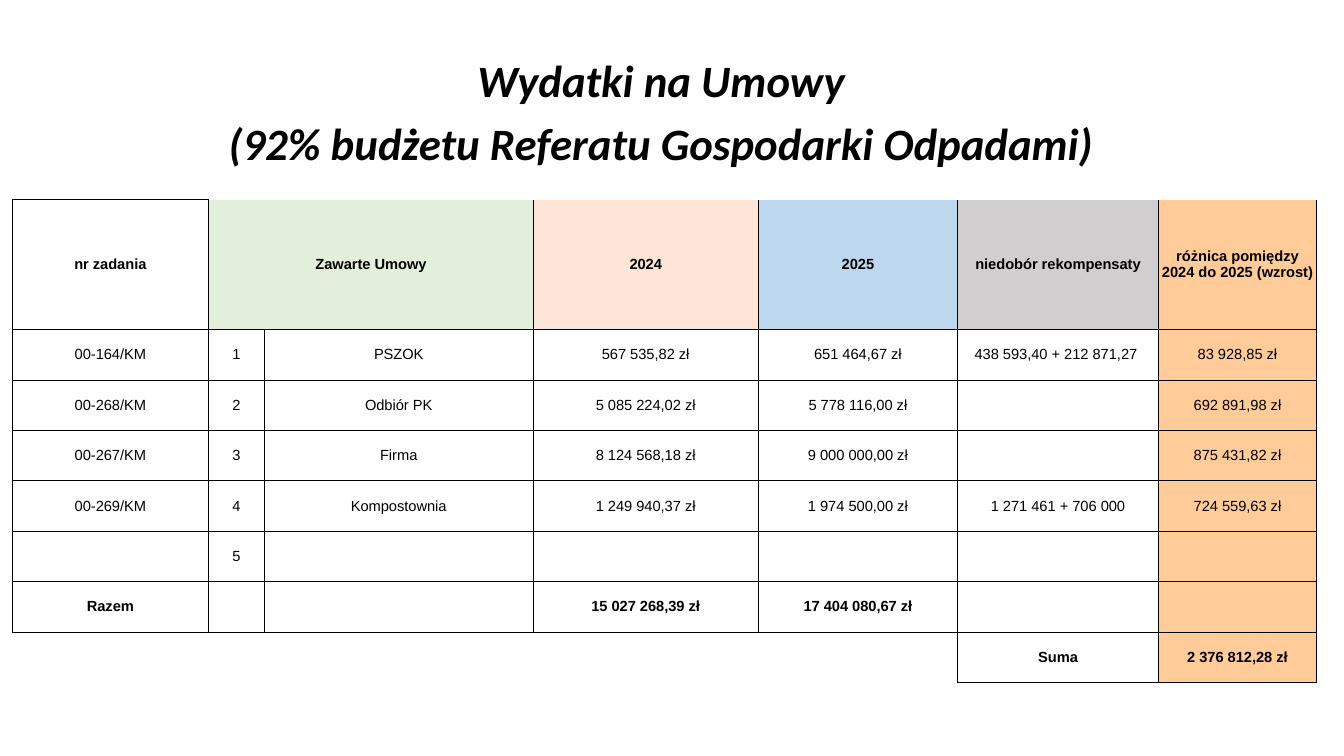
import lxml.etree
import pptx
import pptx.dml.color
import pptx.enum.text
import pptx.oxml.ns
import pptx.util

EMU_PER_PX = 9144  # 100 px to the inch
BLACK = pptx.dml.color.RGBColor(0x00, 0x00, 0x00)
GREEN = pptx.dml.color.RGBColor(0xE2, 0xEF, 0xDA)
PINK = pptx.dml.color.RGBColor(0xFC, 0xE4, 0xD6)
BLUE = pptx.dml.color.RGBColor(0xBD, 0xD7, 0xEE)
GREY = pptx.dml.color.RGBColor(0xD0, 0xCE, 0xCE)
ORANGE = pptx.dml.color.RGBColor(0xFF, 0xCC, 0x99)

COLUMN_WIDTHS = [195, 55, 267, 223, 198, 199, 157]
ROW_HEIGHTS = [129] + [50] * 8
HEADER_FILLS = [None, GREEN, GREEN, PINK, BLUE, GREY, ORANGE]
HEADER, TOTAL, SUM, LAST = 0, 6, 7, 8
SHORTFALL, INCREASE = 5, 6

EXPENSES = [
    ["nr zadania", "Zawarte Umowy", "", "2024", "2025", "niedobór rekompensaty",
     "różnica pomiędzy 2024 do 2025 (wzrost)"],
    ["00-164/KM", "1", "PSZOK", "567 535,82 zł", "651 464,67 zł",
     "438 593,40 + 212 871,27 ", "83 928,85 zł"],
    ["00-268/KM", "2", "Odbiór PK", "5 085 224,02 zł", "5 778 116,00 zł", "", "692 891,98 zł"],
    ["00-267/KM", "3", "Firma", "8 124 568,18 zł", "9 000 000,00 zł", "", "875 431,82 zł"],
    ["00-269/KM", "4", "Kompostownia", "1 249 940,37 zł", "1 974 500,00 zł",
     "1 271 461 + 706 000", "724 559,63 zł"],
    ["", "5", "", "", "", "", ""],
    ["Razem", "", "", "15 027 268,39 zł", "17 404 080,67 zł", "", ""],
    ["", "", "", "", "", "Suma", "2 376 812,28 zł"],
    [""] * 7,
]


def px(length):
    return pptx.util.Emu(length * EMU_PER_PX)


def write_text(frame, text, font, size, bold=False, italic=False, line_spacing=None):
    """Write centred text, one paragraph for each line."""
    frame.text = text
    for paragraph in frame.paragraphs:
        paragraph.alignment = pptx.enum.text.PP_ALIGN.CENTER
        if line_spacing:
            paragraph.line_spacing = pptx.util.Pt(line_spacing)
        paragraph.font.name = font
        paragraph.font.size = pptx.util.Pt(size)
        paragraph.font.bold = bold
        paragraph.font.italic = italic
        paragraph.font.color.rgb = BLACK


def cell_edges(row, column):
    """Return the letters of the sides that carry a line."""
    if row == HEADER:
        return "LRTB" if column == 0 else "LRB"
    if row == LAST:
        return "T" if column >= SHORTFALL else ""
    if row == SUM and column < SHORTFALL:
        return "TR" if column == SHORTFALL - 1 else "T"
    return "LRTB"


def cell_fill(row, column):
    if row == HEADER:
        return HEADER_FILLS[column]
    return ORANGE if column == INCREASE and row <= SUM else None


class ExpensesSlide:
    title_font = "Calibri"
    table_font = "Arial"
    border_width = 0.5

    def __init__(self, presentation):
        self.slide = presentation.slides.add_slide(presentation.slide_layouts[6])

    def title(self, text, left, top, width, height):
        frame = self.slide.shapes.add_textbox(px(left), px(top), px(width), px(height)).text_frame
        frame.word_wrap = True
        frame.vertical_anchor = pptx.enum.text.MSO_ANCHOR.MIDDLE
        frame.margin_left, frame.margin_right = px(10), px(32)
        frame.margin_top, frame.margin_bottom = px(5), px(19)
        write_text(frame, text, self.title_font, 32, bold=True, italic=True, line_spacing=45)

    def border(self, cell, edges):
        properties = cell._tc.get_or_add_tcPr()
        for side in "LRTB":
            line = lxml.etree.SubElement(properties, pptx.oxml.ns.qn(f"a:ln{side}"))
            line.set("w", str(pptx.util.Pt(self.border_width)))
            if side in edges:
                fill = lxml.etree.SubElement(line, pptx.oxml.ns.qn("a:solidFill"))
                lxml.etree.SubElement(fill, pptx.oxml.ns.qn("a:srgbClr")).set("val", str(BLACK))
            else:
                lxml.etree.SubElement(line, pptx.oxml.ns.qn("a:noFill"))

    def cell(self, cell, text, edges, color, bold):
        cell.vertical_anchor = pptx.enum.text.MSO_ANCHOR.MIDDLE
        cell.margin_left = cell.margin_right = px(1)
        cell.margin_top = cell.margin_bottom = px(5)
        write_text(cell.text_frame, text, self.table_font, 10.5, bold=bold)
        self.border(cell, edges)
        if color is None:
            cell.fill.background()
        else:
            cell.fill.solid()
            cell.fill.fore_color.rgb = color

    def table(self, rows, left, top):
        table = self.slide.shapes.add_table(
            len(rows), len(COLUMN_WIDTHS), px(left), px(top),
            px(sum(COLUMN_WIDTHS)), px(sum(ROW_HEIGHTS))).table
        table.first_row = table.horz_banding = False
        for column, width in zip(table.columns, COLUMN_WIDTHS):
            column.width = px(width)
        for row, height in zip(table.rows, ROW_HEIGHTS):
            row.height = px(height)
        table.cell(HEADER, 1).merge(table.cell(HEADER, 2))
        for r, texts in enumerate(rows):
            for c, text in enumerate(texts):
                self.cell(table.cell(r, c), text, cell_edges(r, c), cell_fill(r, c),
                          bold=r in (HEADER, TOTAL, SUM))


def main():
    presentation = pptx.Presentation()
    presentation.slide_width, presentation.slide_height = px(1333), px(750)
    expenses = ExpensesSlide(presentation)
    expenses.title("Wydatki na Umowy\n(92% budżetu Referatu Gospodarki Odpadami)",
                   92, 40, 1150, 145)
    expenses.table(EXPENSES, 12, 198)
    presentation.save("out.pptx")


if __name__ == "__main__":
    main()
